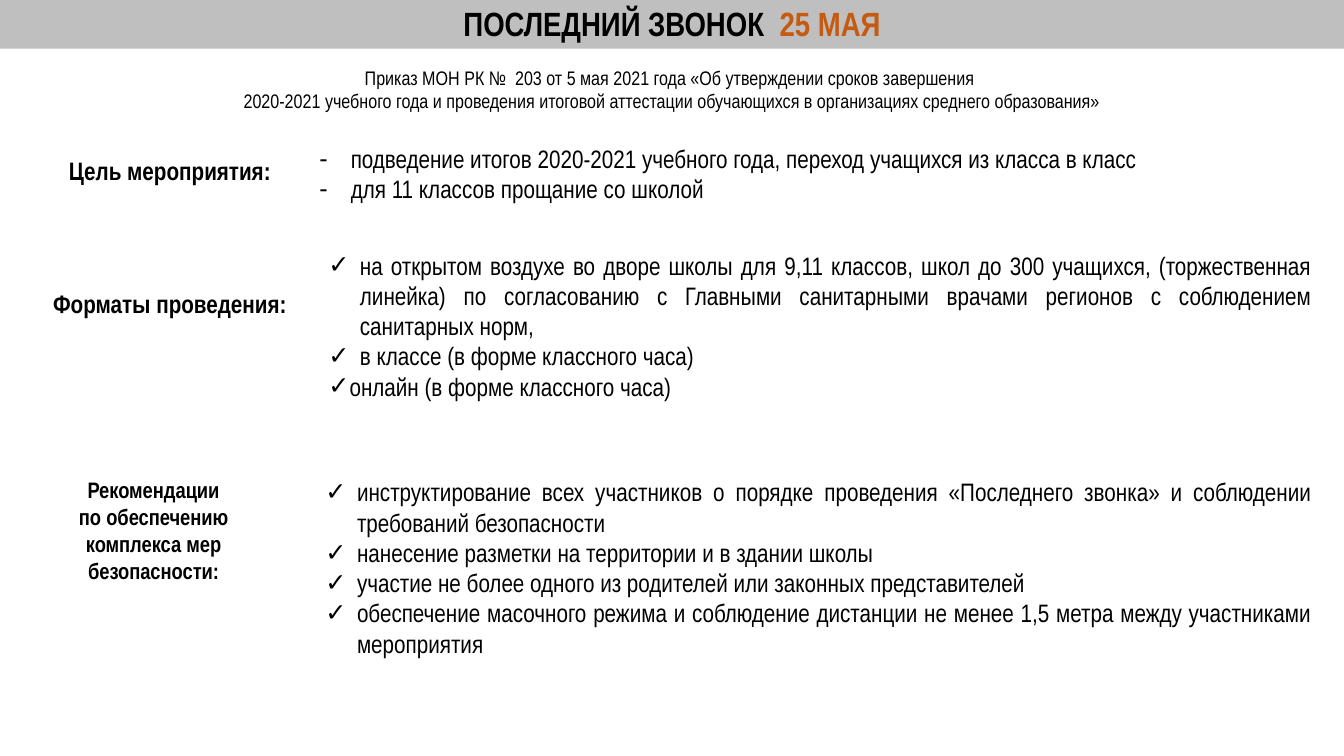
from pptx import Presentation
from pptx.dml.color import RGBColor
from pptx.enum import shapes, text
from pptx.oxml.ns import qn
from pptx.util import Pt
from lxml import etree

BLACK = RGBColor(0, 0, 0)
WHITE = RGBColor(255, 255, 255)
GREY = RGBColor(0xBF, 0xBF, 0xBF)
ORANGE = RGBColor(0xC5, 0x5A, 0x11)
FONT = "Arial Narrow"
MID, BOTH = text.PP_ALIGN.CENTER, text.PP_ALIGN.JUSTIFY
HANG = Pt(22.5)

deck = Presentation()
deck.slide_width, deck.slide_height = Pt(960), Pt(540)
slide = deck.slides.add_slide(deck.slide_layouts[5])


def style(run, size, bold=False, color=BLACK):
    for name, value in {"name": FONT, "size": Pt(size), "bold": bold}.items():
        setattr(run.font, name, value)
    run.font.color.rgb = color


def write(shape, lines, size, bold=False, align=MID, mark=None):
    frame = shape.text_frame
    frame.word_wrap = True
    frame.vertical_anchor = text.MSO_ANCHOR.MIDDLE
    for i, line in enumerate(lines):
        par = frame.paragraphs[0] if i == 0 else frame.add_paragraph()
        par.alignment = align
        run = par.add_run()
        run.text = line
        style(run, size, bold)
        if mark:
            props = par._p.get_or_add_pPr()
            props.set("marL", str(HANG))
            props.set("indent", str(-HANG))
            etree.SubElement(props, qn("a:buFont")).set("typeface", "Arial")
            etree.SubElement(props, qn("a:buChar")).set("char", mark)


# Title bar
title = slide.shapes.title
spot = {"left": 0, "top": Pt(-1.2), "width": Pt(960), "height": Pt(36)}
for name, value in spot.items():
    setattr(title, name, value)
title.fill.solid()
title.fill.fore_color.rgb = GREY
write(title, ["ПОСЛЕДНИЙ ЗВОНОК  "], 24, True)
date = title.text_frame.paragraphs[0].add_run()
date.text = "25 МАЯ"
style(date, 24, True, ORANGE)

# Order behind the event
order = slide.shapes.add_textbox(0, Pt(43.2), Pt(960), Pt(41))
write(order, [
    "Приказ МОН РК №  203 от 5 мая 2021 года «Об утверждении сроков завершения ",
    "2020-2021 учебного года и проведения итоговой аттестации обучающихся "
    "в организациях среднего образования»"], 14)

# Labels and their lists: box, size, bold, alignment, bullet, lines
parts = [
    ((13, 107.3, 216.7, 28.8), 18, True, MID, None, ["Цель мероприятия:"]),
    ((221, 98.6, 651, 51), 18, False, BOTH, "-", [
        "подведение итогов 2020-2021 учебного года, переход учащихся из класса в класс",
        "для 11 классов прощание со школой"]),
    ((13, 202.3, 216.7, 28.8), 18, True, MID, None, ["Форматы проведения:"]),
    ((227.5, 174.2, 716.5, 116.6), 18, False, BOTH, "✓", [
        "на открытом воздухе во дворе школы для 9,11 классов, школ до 300 учащихся, "
        "(торжественная линейка) по согласованию с Главными санитарными врачами "
        "регионов с соблюдением санитарных норм,",
        "в классе (в форме классного часа)",
        "онлайн (в форме классного часа)"]),
    ((48.2, 336.2, 123.1, 85), 16, True, MID, None, [
        "Рекомендации по обеспечению комплекса мер безопасности:"]),
    ((225.4, 336.2, 718.6, 138.2), 18, False, BOTH, "✓", [
        "инструктирование всех участников о порядке проведения «Последнего звонка» "
        "и соблюдении требований безопасности",
        "нанесение разметки на территории и в здании школы",
        "участие не более одного из родителей или законных представителей",
        "обеспечение масочного режима и соблюдение дистанции не менее 1,5 метра "
        "между участниками мероприятия"]),
]
for place, size, bold, align, mark, lines in parts:
    box = slide.shapes.add_shape(shapes.MSO_SHAPE.RECTANGLE, *map(Pt, place))
    box.shadow.inherit = False
    box.fill.background()
    box.line.color.rgb = WHITE
    box.line.width = Pt(0.75)
    write(box, lines, size, bold, align, mark)
    # The online item starts right after its tick
    if lines[-1].startswith("онлайн"):
        box.text_frame.paragraphs[-1]._p.pPr.set("marL", "0")

deck.save("out.pptx")
